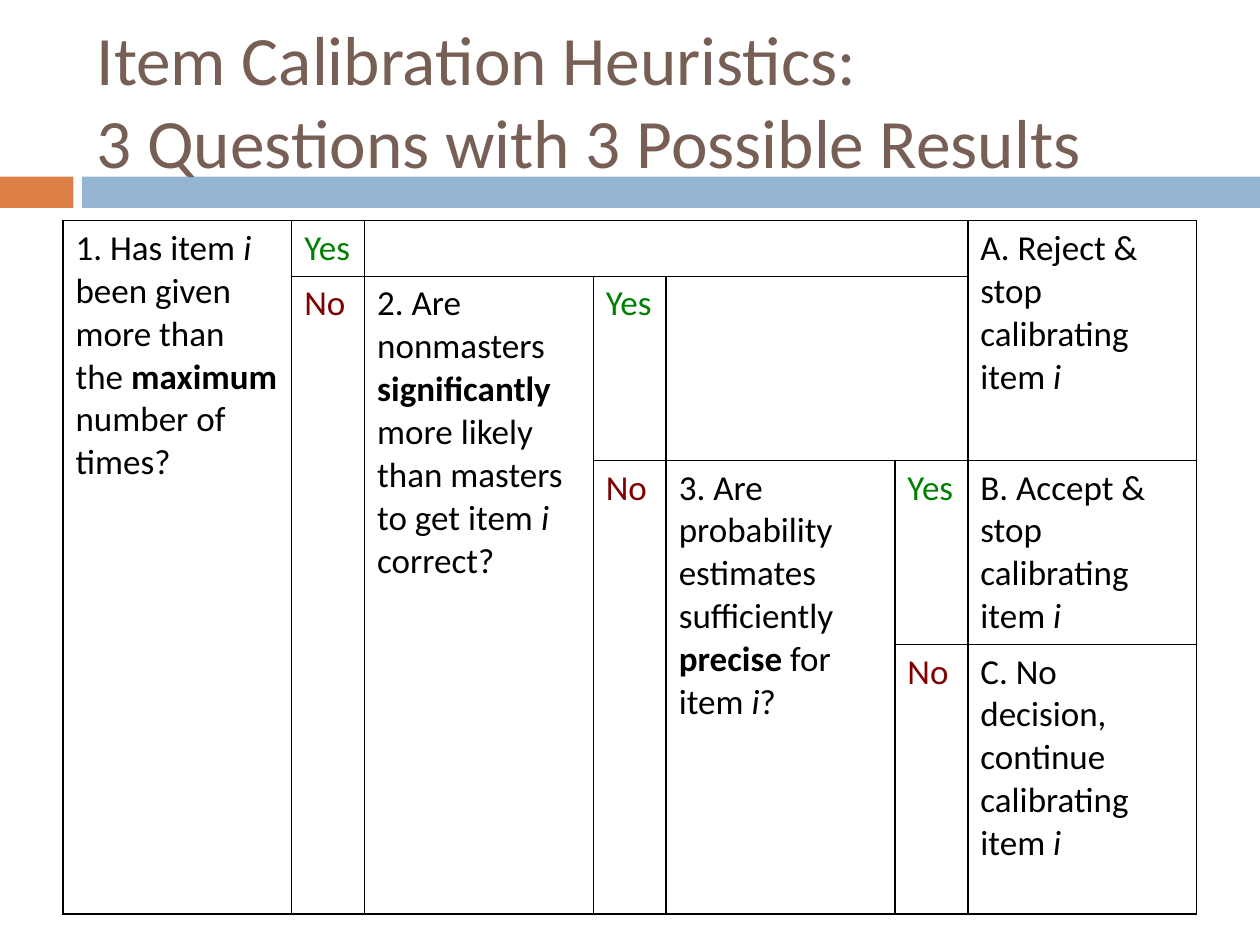
from lxml import etree
from pptx import Presentation
from pptx.dml.color import RGBColor
from pptx.enum.shapes import MSO_SHAPE
from pptx.enum.text import MSO_ANCHOR
from pptx.oxml.ns import qn
from pptx.util import Cm, Pt

RECTANGLE = MSO_SHAPE.RECTANGLE
MIDDLE = MSO_ANCHOR.MIDDLE

BLACK = RGBColor(0x00, 0x00, 0x00)
GREEN = RGBColor(0x00, 0x80, 0x00)
MAROON = RGBColor(0x80, 0x00, 0x00)
BROWN = RGBColor(0x77, 0x5F, 0x55)
ORANGE = RGBColor(0xDD, 0x80, 0x47)
BLUE = RGBColor(0x94, 0xB6, 0xD2)

# Content: a text is a list of paragraphs, each a list of (words, style);
# style is "b" for bold, "i" for italic
TITLE = [[("Item Calibration Heuristics:\v3 Questions with 3 Possible Results", "")]]
YES = [[("Yes", "")]]
NO = [[("No", "")]]
MAXIMUM_QUESTION = [[("1. Has item ", ""), ("i", "i"), (" been given more than the ", ""),
                     ("maximum ", "b"), ("number of times?", "")]]
DIFFERENCE_QUESTION = [[("2. Are nonmasters ", ""), ("significantly", "b")],
                       [("more likely than masters to get item ", ""), ("i ", "i"),
                        ("correct?", "")]]
PRECISION_QUESTION = [[("3. Are probability estimates sufficiently", ""), (" precise ", "b"),
                       ("for item ", ""), ("i", "i"), ("?", "")]]
REJECT = [[("A. Reject & stop calibrating item ", ""), ("i", "i")]]
ACCEPT = [[("B. Accept & stop calibrating item ", ""), ("i", "i")]]
CONTINUE = [[("C. No decision, continue calibrating item ", ""), ("i", "i")]]

# (row, column, rows spanned, columns spanned, text, colour)
CELLS = [
    (0, 0, 4, 1, MAXIMUM_QUESTION, BLACK),
    (0, 1, 1, 1, YES, GREEN),
    (0, 2, 1, 4, None, BLACK),
    (0, 6, 2, 1, REJECT, BLACK),
    (1, 1, 3, 1, NO, MAROON),
    (1, 2, 3, 1, DIFFERENCE_QUESTION, BLACK),
    (1, 3, 1, 1, YES, GREEN),
    (1, 4, 1, 2, None, BLACK),
    (2, 3, 2, 1, NO, MAROON),
    (2, 4, 2, 1, PRECISION_QUESTION, BLACK),
    (2, 5, 1, 1, YES, GREEN),
    (2, 6, 1, 1, ACCEPT, BLACK),
    (3, 5, 1, 1, NO, MAROON),
    (3, 6, 1, 1, CONTINUE, BLACK),
]

# Layout in centimetres
TEXT_WIDTH, ANSWER_WIDTH = 4.61, 1.47
COLUMN_WIDTHS = [TEXT_WIDTH, ANSWER_WIDTH] * 3 + [TEXT_WIDTH]
ROW_HEIGHTS = [1.12, 3.71, 3.71, 5.44]
BANDS = [(0, 1.48, ORANGE), (1.65, 23.75, BLUE)]  # left, width, colour


def write_text(frame, paragraphs, size=20, color=BLACK, font="Calibri"):
    frame.word_wrap = True
    for number, runs in enumerate(paragraphs):
        paragraph = frame.add_paragraph() if number else frame.paragraphs[0]
        for words, style in runs:
            for line_number, line in enumerate(words.split("\v")):
                if line_number:
                    paragraph.add_line_break()
                run = paragraph.add_run()
                run.text = line
                run.font.name = font
                run.font.size = Pt(size)
                run.font.color.rgb = color
                run.font.bold = style == "b"
                run.font.italic = style == "i"


def add_borders(cell, color=BLACK, width=1):
    properties = cell._tc.get_or_add_tcPr()
    for side in ("a:lnL", "a:lnR", "a:lnT", "a:lnB"):
        line = etree.SubElement(properties, qn(side), w=str(Pt(width)))
        fill = etree.SubElement(line, qn("a:solidFill"))
        etree.SubElement(fill, qn("a:srgbClr"), val=str(color))


def main():
    deck = Presentation()
    deck.slide_width, deck.slide_height = Cm(25.4), Cm(19.05)
    slide = deck.slides.add_slide(deck.slide_layouts[6])

    # Coloured bands under the title
    for left, width, color in BANDS:
        band = slide.shapes.add_shape(RECTANGLE, Cm(left), Cm(3.56), Cm(width), Cm(0.63))
        band.shadow.inherit = False
        band.fill.solid()
        band.fill.fore_color.rgb = color
        band.line.fill.background()

    # Title
    title = slide.shapes.add_textbox(Cm(1.7), Cm(0.64), Cm(22.66), Cm(2.74))
    title.text_frame.vertical_anchor = MIDDLE
    write_text(title.text_frame, TITLE, size=39.6, color=BROWN)

    # Decision table
    table = slide.shapes.add_table(
        len(ROW_HEIGHTS), len(COLUMN_WIDTHS), Cm(1.27), Cm(4.45),
        Cm(sum(COLUMN_WIDTHS)), Cm(sum(ROW_HEIGHTS))).table
    table.first_row = table.horz_banding = False
    for column, width in zip(table.columns, COLUMN_WIDTHS):
        column.width = Cm(width)
    for row, height in zip(table.rows, ROW_HEIGHTS):
        row.height = Cm(height)
    for cell in table.iter_cells():
        add_borders(cell)
        cell.fill.background()

    for row, column, rows, columns, text, color in CELLS:
        cell = table.cell(row, column)
        if rows * columns > 1:
            cell.merge(table.cell(row + rows - 1, column + columns - 1))
        if text:
            write_text(cell.text_frame, text, color=color)

    deck.save("out.pptx")


if __name__ == "__main__":
    main()
